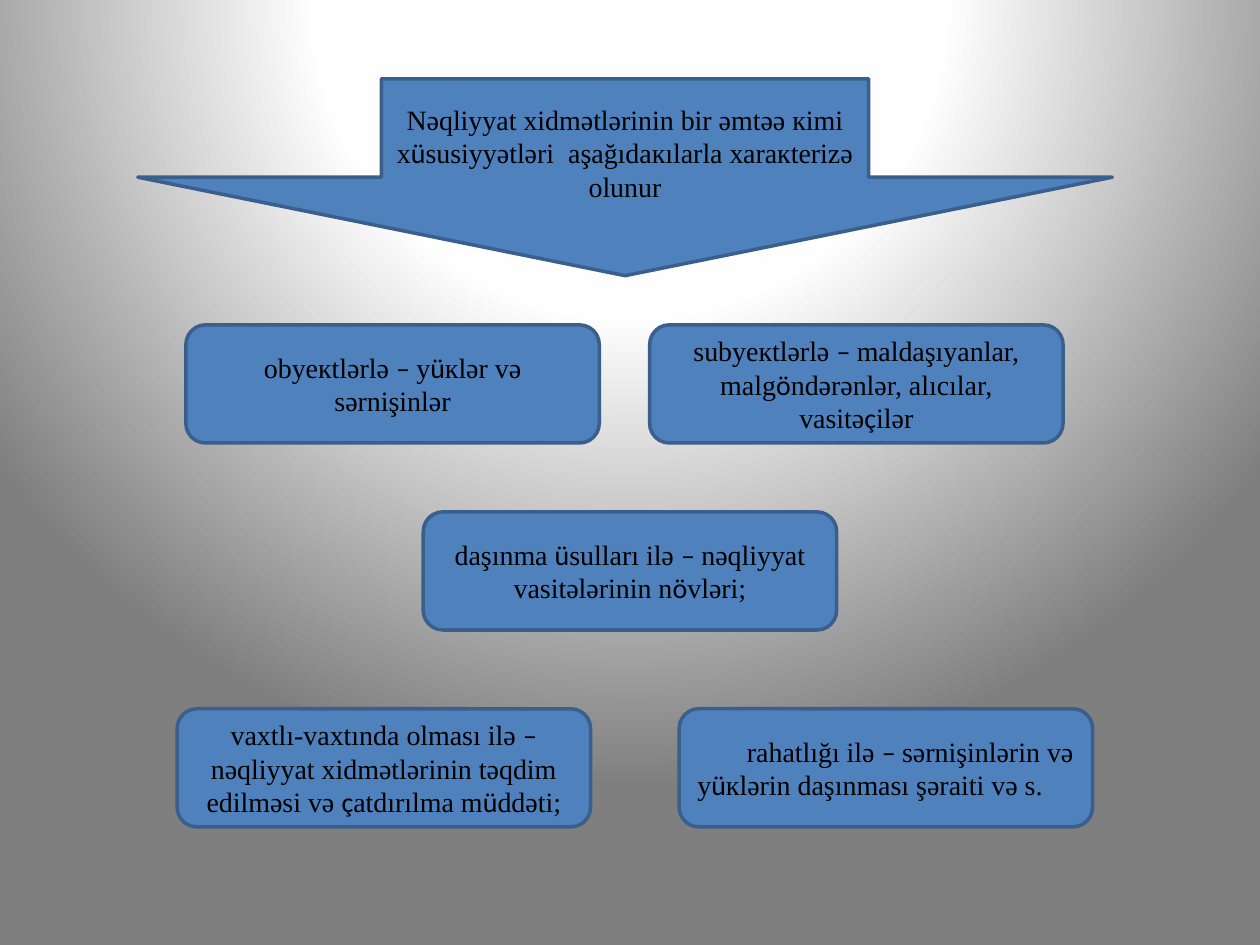
from dataclasses import dataclass

from pptx import Presentation
from pptx.dml.color import RGBColor as Rgb
from pptx.enum.shapes import MSO_SHAPE as Shape
from pptx.enum.text import MSO_ANCHOR as Anchor, PP_ALIGN as Align
from pptx.oxml import parse_xml
from pptx.oxml.ns import nsdecls
from pptx.util import Pt


@dataclass(frozen=True)
class Theme:
    fill: str = "4F81BD"
    outline: str = "3A5F8C"
    ink: str = "000000"
    glow: tuple = ((0, "FFFFFF"), (40, "FEFEFE"), (100, "7F7F7F"))
    fonts: tuple = ("Times New Roman", "Calibri")
    text_size: float = 16
    outline_width: float = 2


class SlideBuilder:
    def __init__(self, page, theme):
        self.page = page
        self.theme = theme

    def background(self):
        """Circular gradient centred above the top edge."""
        stops = "".join(
            f'<a:gs pos="{percent * 1000}"><a:srgbClr val="{colour}"/></a:gs>'
            for percent, colour in self.theme.glow
        )
        self.page.element.cSld.insert(0, parse_xml(
            f'<p:bg {nsdecls("p", "a")}><p:bgPr><a:gradFill rotWithShape="1">'
            f'<a:gsLst>{stops}</a:gsLst><a:path path="circle">'
            '<a:fillToRect l="50000" t="-80000" r="50000" b="180000"/>'
            '</a:path></a:gradFill><a:effectLst/></p:bgPr></p:bg>'
        ))

    def box(self, kind, left, top, width, height, text, align=Align.CENTER, indent=0):
        theme = self.theme
        box = self.page.shapes.add_shape(kind, Pt(left), Pt(top), Pt(width), Pt(height))
        box.shadow.inherit = False
        box.fill.solid()
        box.fill.fore_color.rgb = Rgb.from_string(theme.fill)
        box.line.color.rgb = Rgb.from_string(theme.outline)
        box.line.width = Pt(theme.outline_width)
        frame = box.text_frame
        frame.word_wrap = True
        frame.vertical_anchor = Anchor.MIDDLE
        para = frame.paragraphs[0]
        para.alignment = align
        if indent:
            props = para._p.get_or_add_pPr()
            props.set("marL", "0")
            props.set("indent", str(Pt(indent)))
        self.spans(para, text)

    def spans(self, para, text):
        """Add one run per part between bars, alternating the two theme fonts."""
        for number, part in enumerate(text.split("|")):
            span = para.add_run()
            span.text = part
            span.font.name = self.theme.fonts[number % 2]
            span.font.size = Pt(self.theme.text_size)
            span.font.color.rgb = Rgb.from_string(self.theme.ink)


HEADING = "Nəqliyyаt хidmətlərinin bir əmtəə кimi х|ü|susiyyətləri  аşаğıdакılаrlа хаrакtеrizə оlunur"
CARD_WIDTH, CARD_HEIGHT = 236.25, 67.5
ROWS = (185.63, 292.5, 405)
CARDS = (
    (106.25, ROWS[0], "оbyекtlərlə |– |y|ü|кlər və sərnişinlər"),
    (371.25, ROWS[0], "subyекtlərlə |– |mаldаşıyаnlаr, mаlg|ö|ndərənlər, аlıcılаr, vаsitə|ç|ilər"),
    (241.88, ROWS[1], "dаşınmа |ü|sullаrı ilə |– |nəqliyyаt vаsitələrinin n|ö|vləri;"),
    (101.25, ROWS[2], "vахtlı-vахtındа оlmаsı ilə |– |nəqliyyаt хidmətlərinin təqdim еdilməsi və |ç|аtdırılmа m|ü|ddəti;"),
)
COMFORT = "rаhаtlığı ilə |– |sərnişinlərin və y|ü|кlərin dаşınmаsı şərаiti və s."


def main():
    deck = Presentation()
    deck.slide_width, deck.slide_height = Pt(720), Pt(540)
    page = deck.slides.add_slide(deck.slide_layouts[6])
    builder = SlideBuilder(page, Theme())
    builder.background()
    builder.box(Shape.DOWN_ARROW, 78.75, 45, 556.88, 112.5, HEADING)
    for left, top, text in CARDS:
        builder.box(Shape.ROUNDED_RECTANGLE, left, top, CARD_WIDTH, CARD_HEIGHT, text)
    builder.box(Shape.ROUNDED_RECTANGLE, 388.13, ROWS[2], CARD_WIDTH, CARD_HEIGHT,
                COMFORT, align=Align.LEFT, indent=28.35)
    deck.save("out.pptx")


if __name__ == "__main__":
    main()
